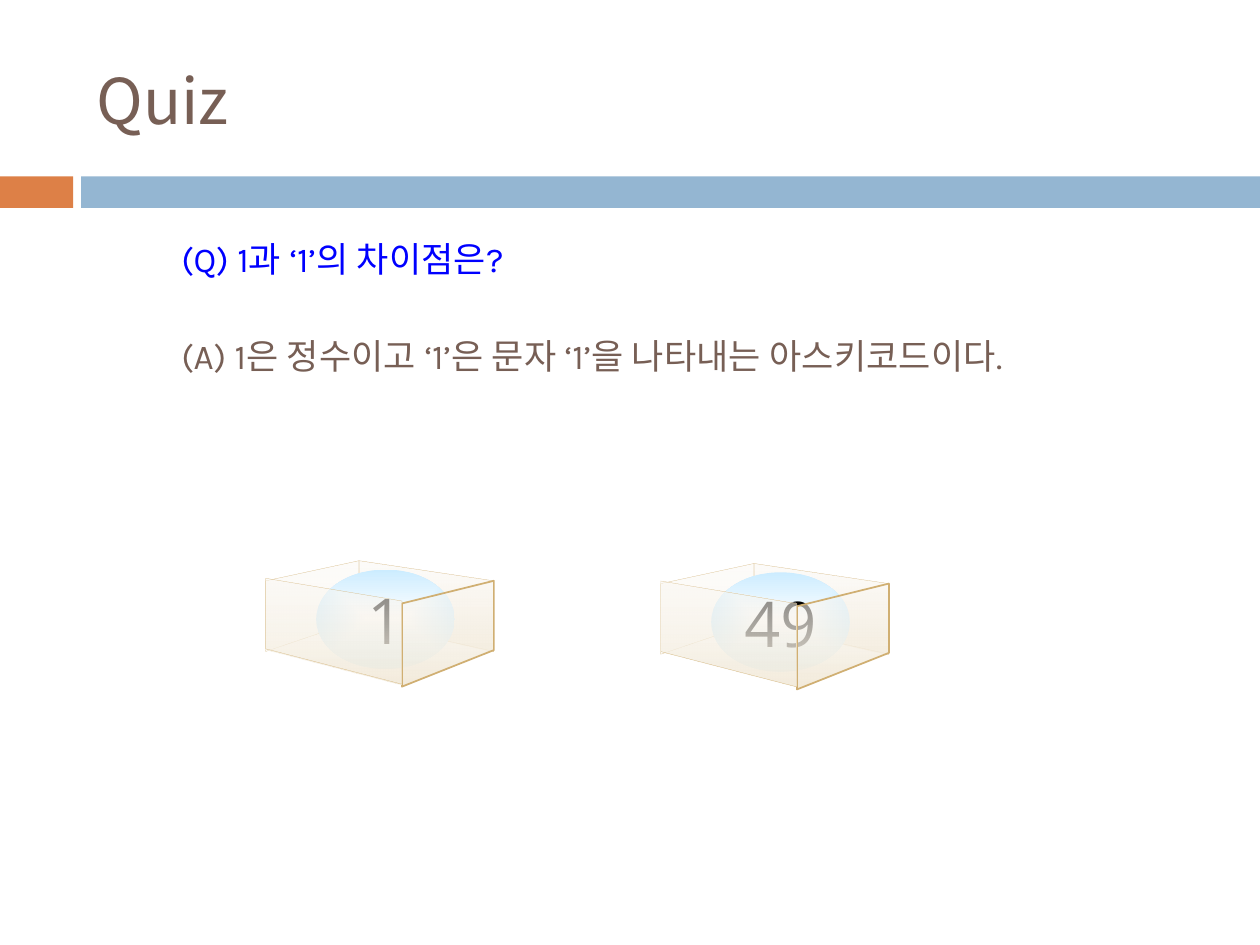
"""Build a quiz slide comparing the integer 1 with the character '1'."""
from dataclasses import dataclass
from typing import NamedTuple

from pptx import Presentation
from pptx.dml.color import RGBColor
from pptx.enum.shapes import MSO_SHAPE
from pptx.enum.text import MSO_ANCHOR, PP_ALIGN
from pptx.oxml import parse_xml
from pptx.oxml.ns import nsdecls, qn
from pptx.util import Inches, Pt

RECTANGLE, OVAL = MSO_SHAPE.RECTANGLE, MSO_SHAPE.OVAL
LEFT, CENTER = PP_ALIGN.LEFT, PP_ALIGN.CENTER
TOP, MIDDLE = MSO_ANCHOR.TOP, MSO_ANCHOR.MIDDLE
COLUMNS, ROWS = 100, 75
CELL = Inches(0.1)
DOWNWARD = '<a:lin ang="5400000" scaled="0"/>'
FROM_CENTRE = ('<a:path path="shape"><a:fillToRect l="50000" t="50000" '
               'r="50000" b="50000"/></a:path>')


@dataclass(frozen=True)
class Theme:
    brown: str = "775F55"
    question: str = "0000FF"
    orange: str = "DD8047"
    blue: str = "94B6D2"
    glass_top: str = "FBF8F3"
    glass_bottom: str = "F3EBDB"
    edge: str = "D0AF72"
    ball_centre: str = "FFFFFF"
    ball_rim: str = "CCECFF"
    digit: str = "000000"
    large: int = 36
    body: int = 20
    title_font: str = "Noto Sans CJK KR"
    body_font: str = "Karla"
    digit_font: str = "Open Sans"


class Area(NamedTuple):
    left: float
    top: float
    width: float
    height: float


class Stop(NamedTuple):
    position: int
    color: str
    opacity: int = 100


class Panel(NamedTuple):
    corners: tuple
    bottom_opacity: int
    edge_width: float


class ValueBox(NamedTuple):
    value: str
    left: float
    top: float


class Statement(NamedTuple):
    wording: str
    area: Area
    color: str
    hanging: float


THEME = Theme()
BARS = ((Area(0, 14, 5.8, 2.5), THEME.orange),
        (Area(6.45, 14, COLUMNS - 6.45, 2.5), THEME.blue))
STATEMENTS = (
    Statement("(Q) 1과 ‘1’의 차이점은?",
              Area(13.4, 18.7, 64.5, 3.7), THEME.question, 3.8),
    Statement("(A) 1은 정수이고 ‘1’은 문자 ‘1’을 나타내는 아스키코드이다.",
              Area(13.4, 26.4, 73.2, 7), THEME.brown, 4.2),
)
BACK_PANELS = (
    Panel(((7.4, 0), (7.4, 4.8), (18.1, 7.2), (18.1, 1.6)), 100, 0.1),
    Panel(((0, 7.2), (7.4, 4.7), (7.4, 0), (0, 1.6)), 0, 0.1),
)
FRONT_PANELS = (
    Panel(((10.8, 10), (18.1, 7.1), (18.1, 1.6), (10.8, 3.4)), 100, 1),
    Panel(((0, 1.4), (0, 7), (10.8, 9.8), (10.8, 3.2)), 95, 0.1),
)
BALL = Area(4, 0.7, 11, 7.9)
VALUE_BOXES = (ValueBox("1", 21.1, 44.5), ValueBox("49", 52.45, 44.72))


def cells(count: float) -> int:
    return round(count * CELL)


def place(area: Area) -> tuple:
    return tuple(cells(length) for length in area)


def write(frame, wording: str, *, font: str, size: int, color: str,
          align=LEFT, anchor=TOP, wrap: bool = True):
    frame.word_wrap = wrap
    frame.vertical_anchor = anchor
    paragraph = frame.paragraphs[0]
    paragraph.alignment = align
    run = paragraph.add_run()
    run.text = wording
    run.font.name = font
    run.font.size = Pt(size)
    run.font.color.rgb = RGBColor.from_string(color)
    run._r.rPr.find(qn("a:latin")).addnext(
        parse_xml(f'<a:ea {nsdecls("a")} typeface="{font}"/>'))
    return paragraph


def fill_gradient(shape, stops: tuple, direction: str) -> None:
    listed = "".join(
        f'<a:gs pos="{stop.position * 1000}"><a:srgbClr val="{stop.color}">'
        f'<a:alpha val="{stop.opacity * 1000}"/></a:srgbClr></a:gs>'
        for stop in stops)
    shape.fill.background()
    properties = shape._element.spPr
    properties.replace(properties.find(qn("a:noFill")), parse_xml(
        f'<a:gradFill {nsdecls("a")} rotWithShape="1"><a:gsLst>{listed}'
        f'</a:gsLst>{direction}</a:gradFill>'))


def draw_bar(slide, area: Area, color: str) -> None:
    bar = slide.shapes.add_shape(RECTANGLE, *place(area))
    bar.shadow.inherit = False
    bar.fill.solid()
    bar.fill.fore_color.rgb = RGBColor.from_string(color)
    bar.line.fill.background()


def draw_title(slide) -> None:
    title = slide.shapes.title
    title.left, title.top, title.width, title.height = place(
        Area(6.65, 2.5, 89.2, 10.8))
    write(title.text_frame, "Quiz", font=THEME.title_font, size=THEME.large,
          color=THEME.brown, anchor=MIDDLE)


def draw_statement(slide, statement: Statement) -> None:
    textbox = slide.shapes.add_textbox(*place(statement.area))
    paragraph = write(textbox.text_frame, statement.wording,
                      font=THEME.body_font, size=THEME.body,
                      color=statement.color)
    paragraph.line_spacing = 0.9
    paragraph.space_before = Pt(THEME.body * 0.2)
    indent = cells(statement.hanging)
    properties = paragraph._p.get_or_add_pPr()
    properties.set("marL", str(indent))
    properties.set("indent", str(-indent))


def draw_panel(slide, box: ValueBox, panel: Panel) -> None:
    start, *others = [(cells(box.left + x), cells(box.top + y))
                      for x, y in panel.corners]
    outline = slide.shapes.build_freeform(*start)
    outline.add_line_segments(others, close=True)
    pane = outline.convert_to_shape()
    pane.shadow.inherit = False
    fill_gradient(pane, (Stop(0, THEME.glass_top, 50),
                         Stop(100, THEME.glass_bottom, panel.bottom_opacity)),
                  DOWNWARD)
    pane.line.color.rgb = RGBColor.from_string(THEME.edge)
    pane.line.width = Pt(panel.edge_width)


def draw_value_box(slide, box: ValueBox) -> None:
    for panel in BACK_PANELS:
        draw_panel(slide, box, panel)
    ball = slide.shapes.add_shape(OVAL, *place(BALL._replace(
        left=box.left + BALL.left, top=box.top + BALL.top)))
    ball.shadow.inherit = False
    fill_gradient(ball, (Stop(0, THEME.ball_centre),
                         Stop(100, THEME.ball_rim)), FROM_CENTRE)
    ball.line.fill.background()
    write(ball.text_frame, box.value, font=THEME.digit_font, size=THEME.large,
          color=THEME.digit, align=CENTER, anchor=MIDDLE, wrap=False)
    for panel in FRONT_PANELS:
        draw_panel(slide, box, panel)


def main() -> None:
    deck = Presentation()
    deck.slide_width, deck.slide_height = cells(COLUMNS), cells(ROWS)
    slide = deck.slides.add_slide(deck.slide_layouts.get_by_name("Title Only"))
    for area, color in BARS:
        draw_bar(slide, area, color)
    draw_title(slide)
    for statement in STATEMENTS:
        draw_statement(slide, statement)
    for box in VALUE_BOXES:
        draw_value_box(slide, box)
    deck.save("out.pptx")


if __name__ == "__main__":
    main()
